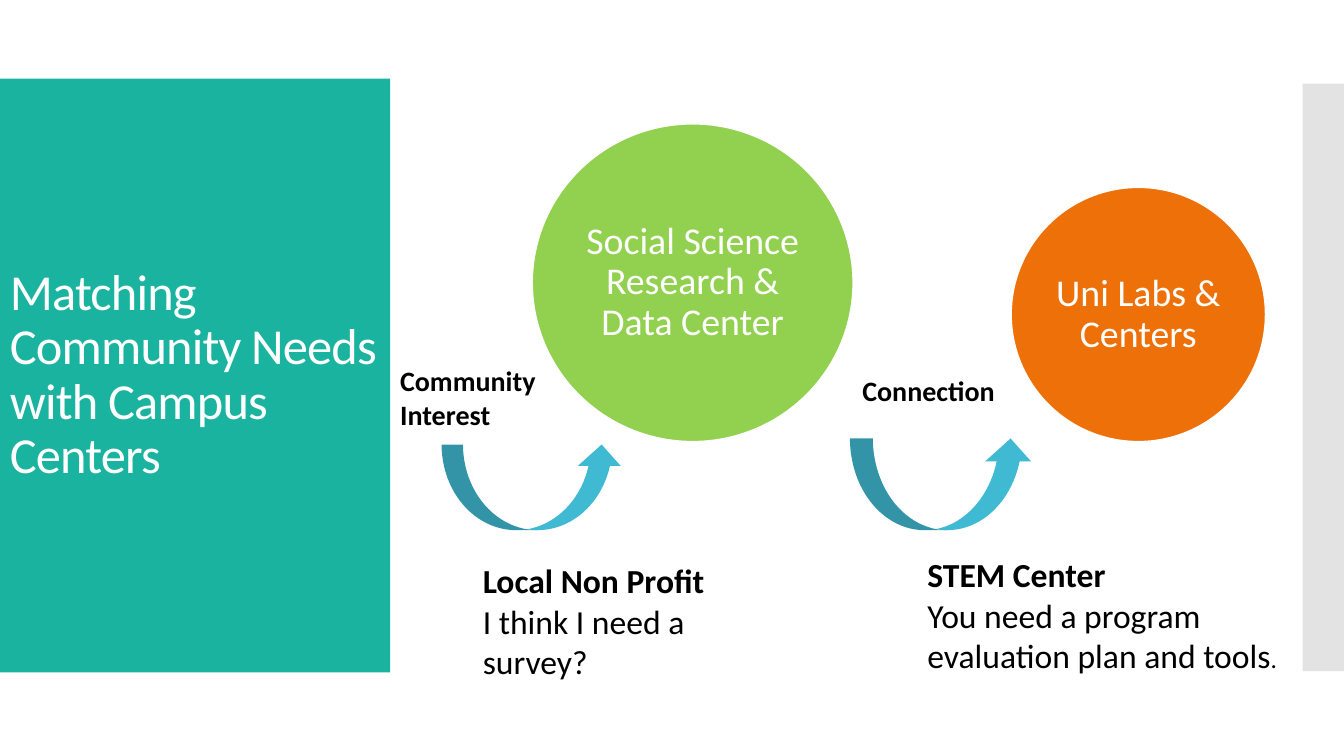
"""Build the slide on matching community needs with campus centers."""
from dataclasses import dataclass

import lxml.etree
import pptx
import pptx.dml.color
import pptx.enum.shapes
import pptx.enum.text
import pptx.oxml.ns
import pptx.util

PX = 9144
FONT = "Calibri"
COLORS = {
    "teal": "1AB39F",
    "gray": "C8C8C8",
    "green": "92D050",
    "orange": "EE7008",
    "blue": "40BAD2",
    "white": "FFFFFF",
    "black": "000000",
}
SHAPE = pptx.enum.shapes.MSO_SHAPE
ALIGN = pptx.enum.text.PP_ALIGN
ANCHOR = pptx.enum.text.MSO_ANCHOR


@dataclass(frozen=True)
class Box:
    x: int
    y: int
    w: int
    h: int

    def emu(self) -> list[pptx.util.Emu]:
        return [pptx.util.Emu(v * PX) for v in (self.x, self.y, self.w, self.h)]


@dataclass(frozen=True)
class Run:
    text: str
    size: int
    bold: bool = False
    color: str = "black"


@dataclass(frozen=True)
class Circle:
    box: Box
    fill: str
    text: str


@dataclass(frozen=True)
class Note:
    box: Box
    paragraphs: list[list[Run]]
    align: ALIGN = ALIGN.LEFT


SIDE_BAR = Box(1292, 83, 41, 583)
TITLE = Box(0, 78, 387, 589)
CIRCLES = [
    Circle(Box(528, 123, 318, 315), "green", "Social Science Research & Data Center"),
    Circle(Box(1003, 186, 252, 252), "orange", "Uni Labs & Centers"),
]
ARROWS = [Box(438, 441, 180, 85), Box(843, 435, 182, 91)]
NOTES = [
    Note(Box(387, 356, 164, 89), [[Run("Community Interest", 20, True)]]),
    Note(Box(839, 366, 164, 51), [[Run("Connection", 20, True)]], ALIGN.CENTER),
    Note(Box(469, 551, 331, 89), [
        [Run("Local Non Profit", 24, True)],
        [Run("I think I need a survey?", 24)],
    ]),
    Note(Box(910, 545, 374, 89), [
        [Run("STEM Center", 24, True)],
        [Run("You need a program evaluation plan and tools", 24), Run(".", 18)],
    ]),
]


def rgb(name: str) -> pptx.dml.color.RGBColor:
    return pptx.dml.color.RGBColor.from_string(COLORS[name])


def add_shape(s: pptx.slide.Slide, kind: SHAPE, box: Box, fill: str) -> pptx.shapes.autoshape.Shape:
    sp = s.shapes.add_shape(kind, *box.emu())
    sp.shadow.inherit = False
    sp.fill.solid()
    sp.fill.fore_color.rgb = rgb(fill)
    sp.line.fill.background()
    return sp


def add_run(p: pptx.text.text._Paragraph, run: Run) -> pptx.text.text._Run:
    r = p.add_run()
    r.text = run.text
    r.font.name = FONT
    r.font.size = pptx.util.Pt(run.size)
    r.font.bold = run.bold
    r.font.color.rgb = rgb(run.color)
    return r


def fill_label(sp: pptx.shapes.autoshape.Shape, run: Run, align: ALIGN) -> pptx.text.text._Run:
    tf = sp.text_frame
    tf.word_wrap = True
    tf.vertical_anchor = ANCHOR.MIDDLE
    p = tf.paragraphs[0]
    p.alignment = align
    p.line_spacing = 0.9
    return add_run(p, run)


def add_side_bar(s: pptx.slide.Slide) -> None:
    sp = add_shape(s, SHAPE.RECTANGLE, SIDE_BAR, "gray")
    qn = pptx.oxml.ns.qn
    color = sp.fill._xPr.find(qn("a:solidFill")).find(qn("a:srgbClr"))
    lxml.etree.SubElement(color, qn("a:alpha"), val="50000")


def add_title(s: pptx.slide.Slide) -> None:
    sp = add_shape(s, SHAPE.RECTANGLE, TITLE, "teal")
    run = Run("Matching Community Needs with Campus Centers", 36, color="white")
    r = fill_label(sp, run, ALIGN.LEFT)
    r.font._element.set("spc", "-60")


def add_circle(s: pptx.slide.Slide, circle: Circle) -> None:
    sp = add_shape(s, SHAPE.OVAL, circle.box, circle.fill)
    sp.line.color.rgb = rgb("white")
    sp.line.width = pptx.util.Pt(0.85)
    tf = sp.text_frame
    tf.margin_left = tf.margin_right = tf.margin_top = tf.margin_bottom = 2 * PX
    fill_label(sp, Run(circle.text, 27, color="white"), ALIGN.CENTER)


def add_note(s: pptx.slide.Slide, note: Note) -> None:
    tf = s.shapes.add_textbox(*note.box.emu()).text_frame
    tf.word_wrap = True
    for i, runs in enumerate(note.paragraphs):
        p = tf.add_paragraph() if i else tf.paragraphs[0]
        p.alignment = note.align
        for run in runs:
            add_run(p, run)


def main() -> None:
    prs = pptx.Presentation()
    prs.slide_width = pptx.util.Emu(1333 * PX)
    prs.slide_height = pptx.util.Emu(750 * PX)
    s = prs.slides.add_slide(prs.slide_layouts[6])
    add_side_bar(s)
    add_title(s)
    for circle in CIRCLES:
        add_circle(s, circle)
    for box in ARROWS:
        add_shape(s, SHAPE.CURVED_UP_ARROW, box, "blue")
    for note in NOTES:
        add_note(s, note)
    prs.save("out.pptx")


if __name__ == "__main__":
    main()
